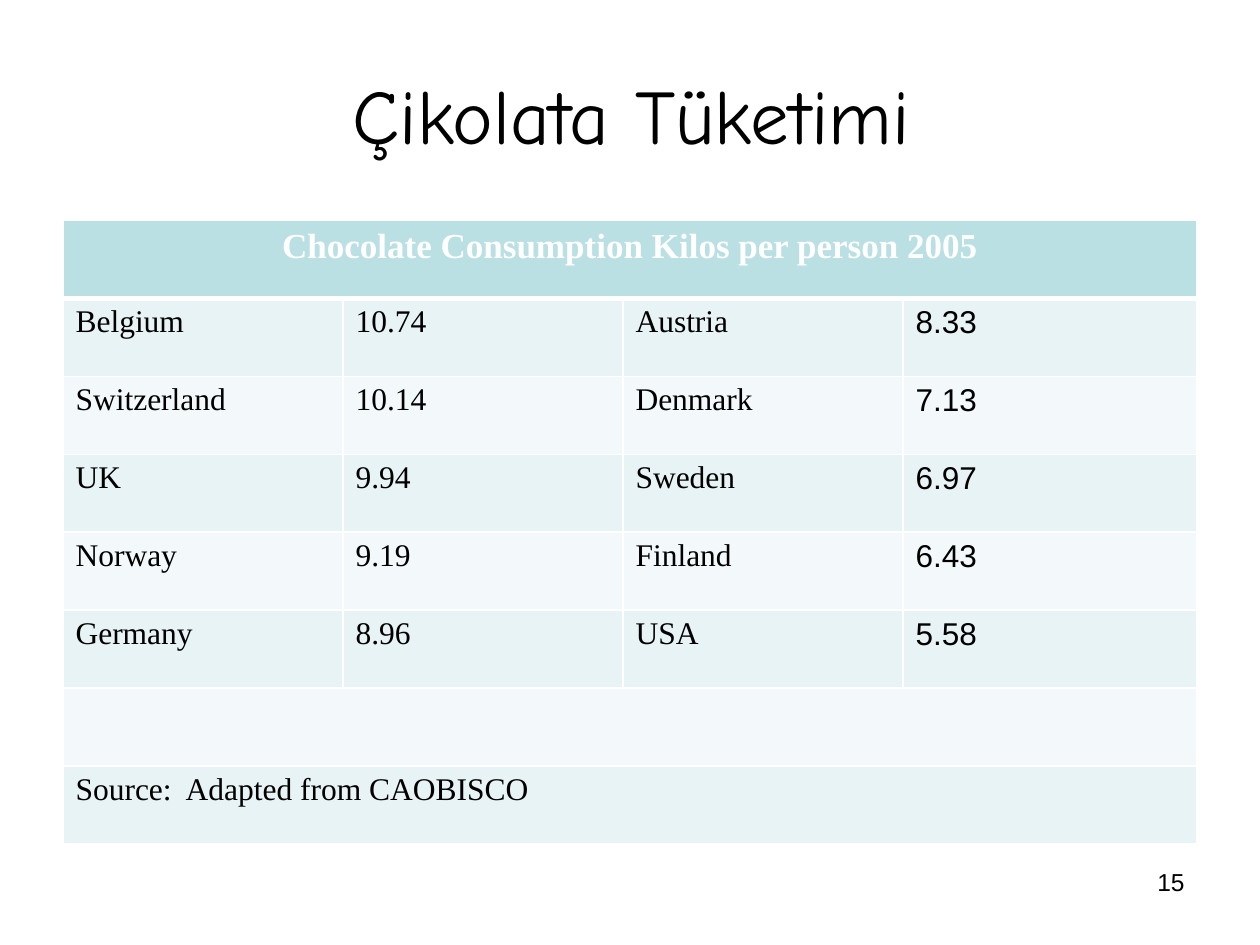
from lxml import etree
from pptx import Presentation
from pptx.dml.color import RGBColor
from pptx.enum.text import MSO_ANCHOR, PP_ALIGN
from pptx.oxml.ns import qn
from pptx.util import Pt

LEFT, CENTER, RIGHT = PP_ALIGN.LEFT, PP_ALIGN.CENTER, PP_ALIGN.RIGHT
MIDDLE = MSO_ANCHOR.MIDDLE

BLACK = RGBColor(0, 0, 0)
WHITE = RGBColor(255, 255, 255)
TEAL = RGBColor(0xBB, 0xE0, 0xE3)
MINT = RGBColor(0xE7, 0xF3, 0xF4)
PALE = RGBColor(0xF3, 0xF9, 0xFA)

SERIF, SANS = "Times New Roman", "Arial"
HEAD = {"name": SERIF, "size": Pt(20), "bold": True}
BODY = {"name": SERIF, "size": Pt(18), "bold": False}
LAST = {**BODY, "name": SANS}
TITLE = {"name": "Comic Neue", "size": Pt(44), "bold": False}
PAGE = {"name": SANS, "size": Pt(14), "bold": False}

WIDTHS = [160, 160, 160, 168]
ROWS = [
    ["Chocolate Consumption Kilos per person 2005"],
    ["Belgium", "10.74", "Austria", "8.33"],
    ["Switzerland", "10.14", "Denmark", "7.13"],
    ["UK", "9.94", "Sweden", "6.97"],
    ["Norway", "9.19", "Finland", "6.43"],
    ["Germany", "8.96", "USA", "5.58"],
    [""],
    ["Source:  Adapted from CAOBISCO"],
]


def write(frame, text, style, color=BLACK, align=LEFT):
    line = frame.paragraphs[0]
    line.text = text
    line.alignment = align
    line.font.color.rgb = color
    for key, value in style.items():
        setattr(line.font, key, value)


def place(shape, box):
    for key, value in zip(("left", "top", "width", "height"), box):
        setattr(shape, key, Pt(value))


def edge(cell, widths):
    props = cell._tc.get_or_add_tcPr()
    for side, width in widths.items():
        line = etree.SubElement(props, qn("a:ln" + side), w=str(Pt(width)))
        fill = etree.SubElement(line, qn("a:solidFill"))
        etree.SubElement(fill, qn("a:srgbClr"), val=str(WHITE))


def add_title(slide, box):
    title = slide.shapes.title
    place(title, box)
    title.text_frame.vertical_anchor = MIDDLE
    write(title.text_frame, "Çikolata Tüketimi", TITLE, align=CENTER)


def add_grid(slide, box):
    frame = slide.shapes.add_table(len(ROWS), len(WIDTHS), *map(Pt, box))
    table = frame.table
    table.first_row = table.horz_banding = False
    for col, width in zip(table.columns, WIDTHS):
        col.width = Pt(width)
    for r, texts in enumerate(ROWS):
        table.rows[r].height = Pt(box[3] / len(ROWS))
        fill = TEAL if r == 0 else MINT if r % 2 else PALE
        for cell in table.rows[r].cells:
            edge(cell, {"L": 1, "R": 1, "T": 3 if r == 1 else 1,
                        "B": 3 if r == 0 else 1})
            cell.fill.solid()
            cell.fill.fore_color.rgb = fill
        if len(texts) == 1:
            table.cell(r, 0).merge(table.cell(r, len(WIDTHS) - 1))
        for c, text in enumerate(texts):
            body = table.cell(r, c).text_frame
            if r == 0:
                write(body, text, HEAD, WHITE, CENTER)
            else:
                write(body, text, LAST if c == 3 else BODY)


def add_page(slide, box):
    frame = slide.shapes.add_textbox(*map(Pt, box)).text_frame
    frame.word_wrap = True
    write(frame, "15", PAGE, align=RIGHT)


def main():
    deck = Presentation()
    deck.slide_width, deck.slide_height = Pt(720), Pt(540)
    slide = deck.slides.add_slide(deck.slide_layouts[5])
    add_title(slide, (36.7, 20.2, 648, 90))
    add_grid(slide, (36, 126, 648, 356.4))
    add_page(slide, (516, 492, 168, 37.5))
    deck.save("out.pptx")


if __name__ == "__main__":
    main()
